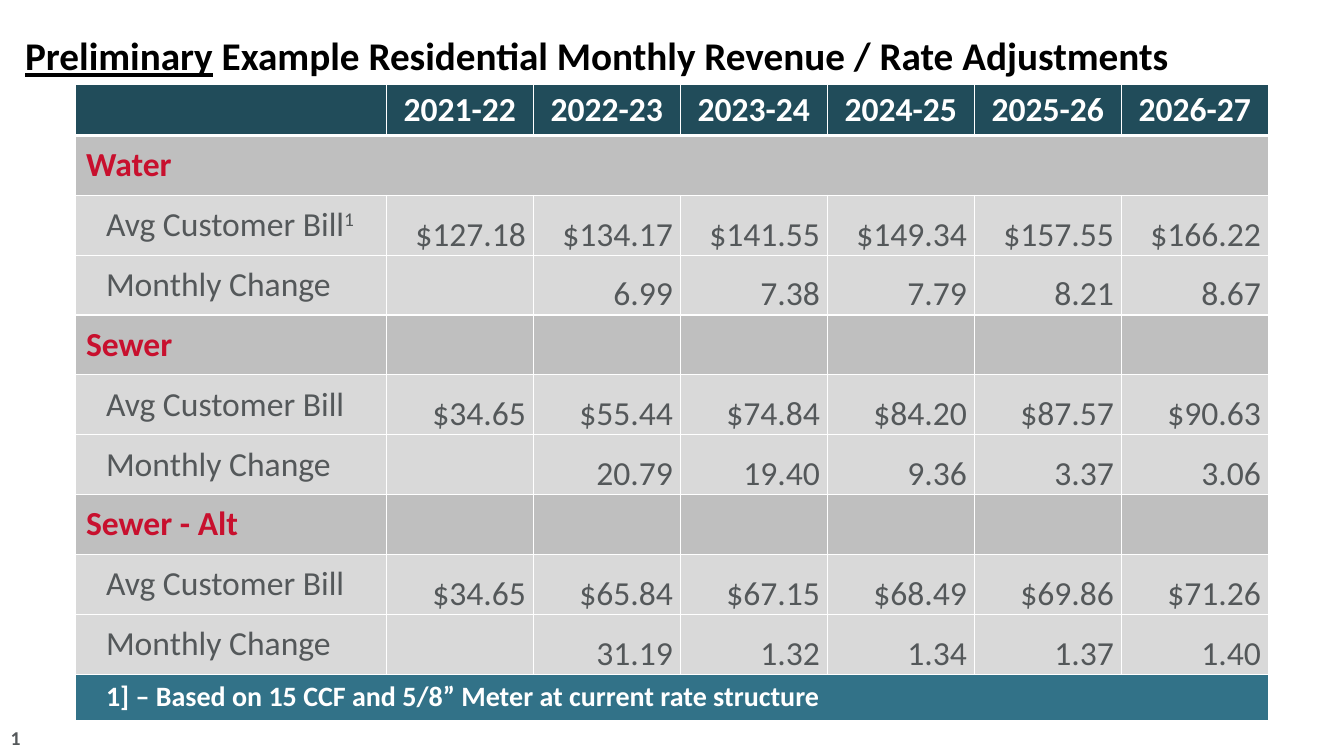
from dataclasses import dataclass

from pptx import Presentation
from pptx.dml.color import RGBColor as Rgb
from pptx.enum.text import MSO_ANCHOR as Anchor, MSO_AUTO_SIZE as AutoSize, PP_ALIGN as Align
from pptx.oxml import parse_xml
from pptx.oxml.ns import nsdecls
from pptx.util import Pt

PX = 9525


@dataclass(frozen=True)
class Theme:
    font: str = "Calibri"
    black: str = "000000"
    white: str = "FFFFFF"
    gray: str = "54585A"
    red: str = "C8102E"
    header_fill: str = "214C5A"
    section_fill: str = "BFBFBF"
    row_fill: str = "D9D9D9"
    note_fill: str = "327288"
    title_size: int = 28
    body_size: int = 24
    note_size: int = 20
    number_size: int = 14


@dataclass(frozen=True)
class Box:
    left: int
    top: int
    width: int
    height: int

    def emu(self):
        return [side * PX for side in (self.left, self.top, self.width, self.height)]


THEME = Theme()
PAGE = Box(0, 0, 1280, 720)
TITLE_BOX = Box(0, 0, 1280, 80)
TABLE_BOX = Box(72, 80, 1136, 605)
NUMBER_BOX = Box(0, 687, 29, 33)

YEAR_WIDTH = 140
HEADER_HEIGHT = 48
NOTE_HEIGHT = 44
LABEL_MARGINS = (29, 5, 10, 5)
SECTION_MARGINS = (10, 5, 10, 5)
VALUE_MARGINS = (0, 0, 7, 0)

YEARS = ["2021-22", "2022-23", "2023-24", "2024-25", "2025-26", "2026-27"]
NOTE = "1] – Based on 15 CCF and 5/8” Meter at current rate structure"
SECTIONS = [
    ("Water", "1",
     ["$127.18", "$134.17", "$141.55", "$149.34", "$157.55", "$166.22"],
     ["", "6.99", "7.38", "7.79", "8.21", "8.67"]),
    ("Sewer", "",
     ["$34.65", "$55.44", "$74.84", "$84.20", "$87.57", "$90.63"],
     ["", "20.79", "19.40", "9.36", "3.37", "3.06"]),
    ("Sewer - Alt", "",
     ["$34.65", "$65.84", "$67.15", "$68.49", "$69.86", "$71.26"],
     ["", "31.19", "1.32", "1.34", "1.37", "1.40"]),
]


def set_all(target, values):
    for name, value in values.items():
        setattr(target, name, value)


def set_margins(target, margins):
    names = ("margin_left", "margin_top", "margin_right", "margin_bottom")
    set_all(target, {name: side * PX for name, side in zip(names, margins)})


def add_span(para, text, size, color, **style):
    span = para.add_run()
    span.text = text
    set_all(span.font, {"name": THEME.font, "size": Pt(size), **style})
    span.font.color.rgb = Rgb.from_string(color)
    return span


def add_title(slide, box):
    title = slide.shapes.title
    set_all(title, dict(zip(("left", "top", "width", "height"), box.emu())))
    frame = title.text_frame
    set_margins(frame, (24, 5, 24, 5))
    set_all(frame, {"vertical_anchor": Anchor.BOTTOM, "word_wrap": True,
                    "auto_size": AutoSize.NONE})
    para = frame.paragraphs[0]
    set_all(para, {"alignment": Align.LEFT, "line_spacing": Pt(26)})
    for text, underline in (("Preliminary", True),
                            (" Example Residential Monthly Revenue / Rate Adjustments", False)):
        add_span(para, text, THEME.title_size, THEME.black, bold=True, underline=underline)


def paint_cell(cell, fill, top=1, bottom=1):
    properties = cell._tc.get_or_add_tcPr()
    for side, width in (("L", 1), ("R", 1), ("T", top), ("B", bottom)):
        properties.append(parse_xml(
            f'<a:ln{side} {nsdecls("a")} w="{Pt(width)}"><a:solidFill>'
            f'<a:srgbClr val="{THEME.white}"/></a:solidFill></a:ln{side}>'))
    cell.fill.solid()
    cell.fill.fore_color.rgb = Rgb.from_string(fill)


def write_cell(cell, text, color, margins=SECTION_MARGINS, size=THEME.body_size,
               bold=False, align=Align.LEFT, anchor=Anchor.MIDDLE):
    set_margins(cell, margins)
    cell.vertical_anchor = anchor
    para = cell.text_frame.paragraphs[0]
    para.alignment = align
    if text:
        add_span(para, text, size, color, bold=bold)
    return para


def fill_row(table, row, fill, top=1, bottom=1):
    cells = list(table.rows[row].cells)
    for cell in cells:
        paint_cell(cell, fill, top, bottom)
    return cells


def add_data_row(table, row, label, marker, values):
    label_cell, *value_cells = fill_row(table, row, THEME.row_fill)
    para = write_cell(label_cell, label, THEME.gray, LABEL_MARGINS)
    if marker:
        span = add_span(para, marker, THEME.body_size, THEME.gray, bold=False)
        span._r.get_or_add_rPr().set("baseline", "30000")
    for cell, value in zip(value_cells, values):
        write_cell(cell, value, THEME.gray, VALUE_MARGINS,
                   align=Align.RIGHT, anchor=Anchor.BOTTOM)


def add_rate_table(slide, box):
    row_count, column_count = 2 + 3 * len(SECTIONS), 1 + len(YEARS)
    table = slide.shapes.add_table(row_count, column_count, *box.emu()).table
    set_all(table, {"first_row": False, "horz_banding": False})
    widths = [box.width - YEAR_WIDTH * len(YEARS)] + [YEAR_WIDTH] * len(YEARS)
    for column, width in zip(table.columns, widths):
        column.width = width * PX
    body_height = (box.height - HEADER_HEIGHT - NOTE_HEIGHT) // (row_count - 2)
    heights = [HEADER_HEIGHT] + [body_height] * (row_count - 2) + [NOTE_HEIGHT]
    for row, height in zip(table.rows, heights):
        row.height = height * PX

    header = fill_row(table, 0, THEME.header_fill, bottom=3)
    for cell, year in zip(header[1:], YEARS):
        write_cell(cell, year, THEME.white, bold=True, align=Align.CENTER)

    for index, (name, marker, bills, changes) in enumerate(SECTIONS):
        row = 1 + 3 * index
        section = fill_row(table, row, THEME.section_fill, top=1 if index else 3)
        write_cell(section[0], name, THEME.red, bold=True)
        add_data_row(table, row + 1, "Avg Customer Bill", marker, bills)
        add_data_row(table, row + 2, "Monthly Change", "", changes)

    note = fill_row(table, row_count - 1, THEME.note_fill)
    write_cell(note[0], NOTE, THEME.white, LABEL_MARGINS, THEME.note_size, bold=True)
    for row in (1, row_count - 1):
        table.cell(row, 0).merge(table.cell(row, column_count - 1))


def add_slide_number(slide, box):
    frame = slide.shapes.add_textbox(*box.emu()).text_frame
    set_all(frame, {"word_wrap": False, "auto_size": AutoSize.SHAPE_TO_FIT_TEXT})
    para = frame.paragraphs[0]
    para.alignment = Align.RIGHT
    para._p.append(parse_xml(
        f'<a:fld {nsdecls("a")} id="{{B6F15528-21DE-4FAA-801E-634DDDAF4B2B}}" type="slidenum">'
        f'<a:rPr lang="en-US" sz="{THEME.number_size * 100}" b="1"><a:solidFill>'
        f'<a:srgbClr val="{THEME.gray}"/></a:solidFill>'
        f'<a:latin typeface="{THEME.font}"/></a:rPr><a:t>1</a:t></a:fld>'))


def main():
    deck = Presentation()
    set_all(deck, {"slide_width": PAGE.width * PX, "slide_height": PAGE.height * PX})
    slide = deck.slides.add_slide(deck.slide_layouts[5])
    add_title(slide, TITLE_BOX)
    add_rate_table(slide, TABLE_BOX)
    add_slide_number(slide, NUMBER_BOX)
    deck.save("out.pptx")


if __name__ == "__main__":
    main()
